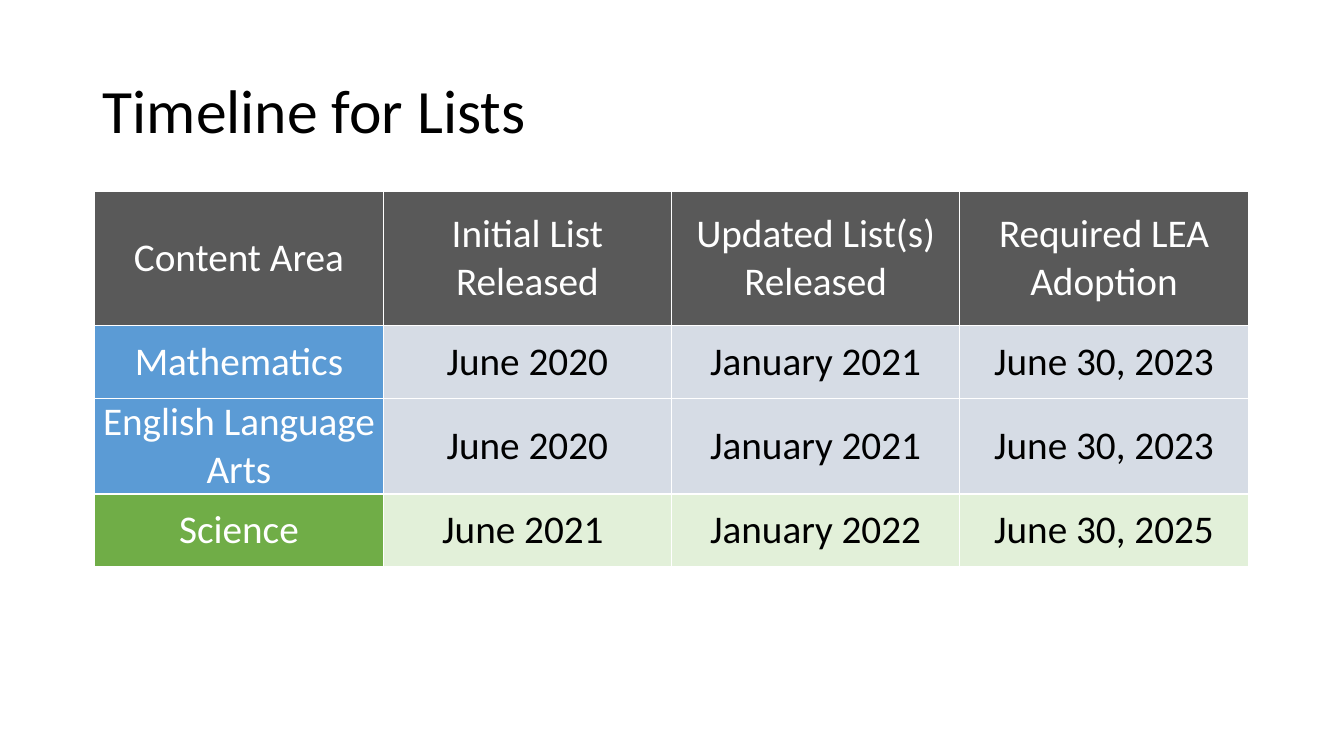
from dataclasses import dataclass

from lxml.etree import SubElement
from pptx import Presentation
from pptx.dml.color import RGBColor
from pptx.enum.text import MSO_ANCHOR, PP_ALIGN
from pptx.oxml.ns import qn
from pptx.util import Inches, Pt


@dataclass(frozen=True)
class Theme:
    """Colours, font and type sizes of the slide."""
    font: str = "Calibri"
    title_size: int = 44
    cell_size: int = 28
    dark: str = "000000"
    light: str = "FFFFFF"
    header: str = "595959"
    blue: str = "5B9BD5"
    pale_blue: str = "D6DCE5"
    green: str = "70AD47"
    pale_green: str = "E2F0D9"


THEME = Theme()
COLUMN_WIDTH = 2.86
HEADER = ["Content Area", "Initial List Released", "Updated List(s) Released",
          "Required LEA Adoption"]
ROWS = [
    (HEADER, 1.33, THEME.header, THEME.header, THEME.light),
    (["Mathematics", "June 2020", "January 2021", "June 30, 2023"],
     0.72, THEME.blue, THEME.pale_blue, THEME.dark),
    (["English Language Arts", "June 2020", "January 2021", "June 30, 2023"],
     0.95, THEME.blue, THEME.pale_blue, THEME.dark),
    (["Science", "June 2021 ", "January 2022", "June 30, 2025"],
     0.72, THEME.green, THEME.pale_green, THEME.dark),
]


def format_paragraph(p, size, color, align):
    """Set the alignment and font of a paragraph."""
    p.alignment = align
    p.font.name = THEME.font
    p.font.size = Pt(size)
    p.font.bold = False
    p.font.color.rgb = RGBColor.from_string(color)


def set_title(slide, text):
    """Place and format the title placeholder."""
    sp = slide.shapes.title
    sp.left, sp.top = Inches(0.92), Inches(0.4)
    sp.width, sp.height = Inches(11.5), Inches(1.45)
    tf = sp.text_frame
    tf.text = text
    tf.word_wrap = True
    tf.vertical_anchor = MSO_ANCHOR.MIDDLE
    p = tf.paragraphs[0]
    p.line_spacing = 0.9
    format_paragraph(p, THEME.title_size, THEME.dark, PP_ALIGN.LEFT)


def set_borders(cell, color):
    """Draw a one-point line on each side of a cell."""
    tc_pr = cell._tc.get_or_add_tcPr()
    for side in ("lnL", "lnR", "lnT", "lnB"):
        ln = SubElement(tc_pr, qn(f"a:{side}"), w=str(Pt(1)))
        fill = SubElement(ln, qn("a:solidFill"))
        SubElement(fill, qn("a:srgbClr"), val=color)


def fill_cell(cell, text, fill, color):
    """Write and format one table cell."""
    set_borders(cell, THEME.light)
    cell.fill.solid()
    cell.fill.fore_color.rgb = RGBColor.from_string(fill)
    cell.vertical_anchor = MSO_ANCHOR.MIDDLE
    cell.margin_left = cell.margin_right = Inches(0.07)
    cell.margin_top = cell.margin_bottom = 0
    cell.text = text
    format_paragraph(cell.text_frame.paragraphs[0], THEME.cell_size, color,
                     PP_ALIGN.CENTER)


def add_timeline(slide):
    """Add the table of release and adoption dates."""
    height = sum(row[1] for row in ROWS)
    table = slide.shapes.add_table(
        len(ROWS), len(HEADER), Inches(0.94), Inches(1.9),
        Inches(COLUMN_WIDTH * len(HEADER)), Inches(height)).table
    table.horz_banding = False
    table.first_col = True
    for column in table.columns:
        column.width = Inches(COLUMN_WIDTH)
    for i, (texts, row_height, label_fill, date_fill, date_color) in enumerate(ROWS):
        table.rows[i].height = Inches(row_height)
        for j, text in enumerate(texts):
            fill, color = (date_fill, date_color) if j else (label_fill, THEME.light)
            fill_cell(table.cell(i, j), text, fill, color)


def main():
    """Build and save the slide."""
    prs = Presentation()
    prs.slide_width, prs.slide_height = Inches(13.33), Inches(7.5)
    slide = prs.slides.add_slide(prs.slide_layouts[5])
    set_title(slide, "Timeline for Lists")
    add_timeline(slide)
    prs.save("out.pptx")


if __name__ == "__main__":
    main()
